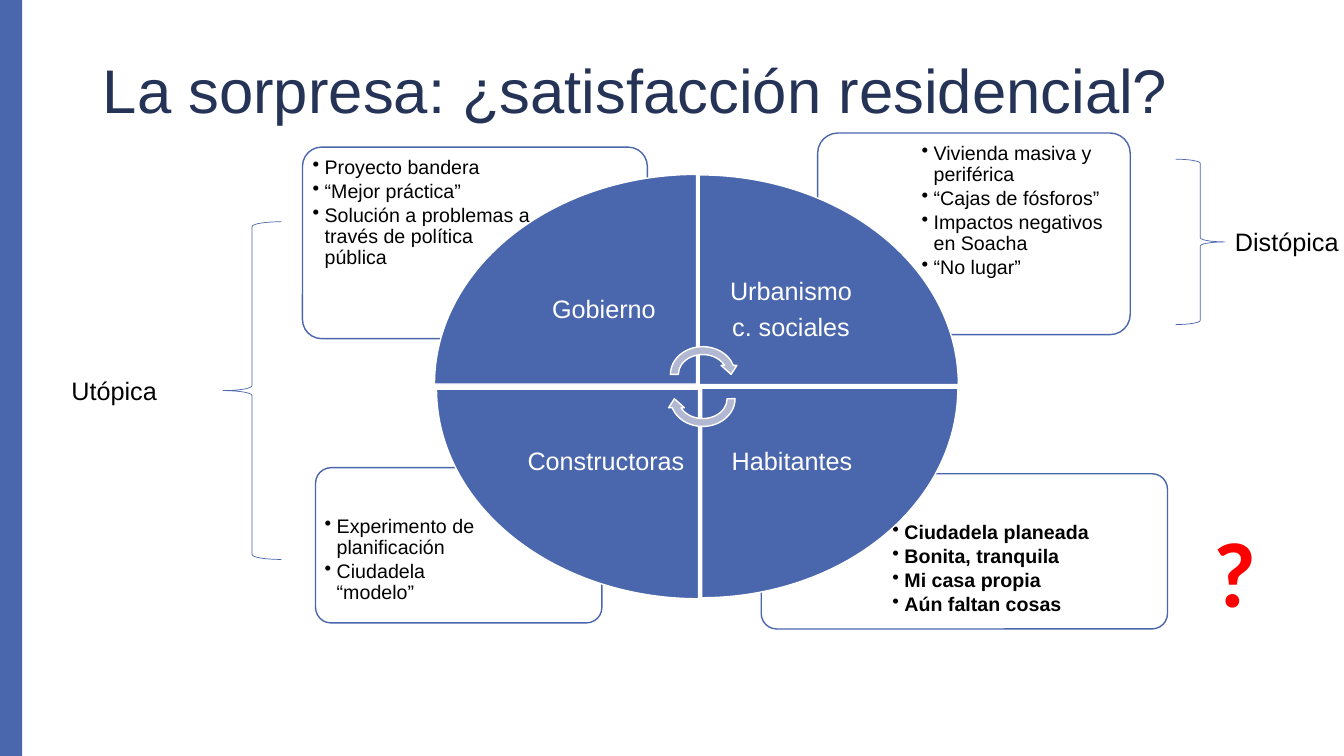
from lxml import etree
from pptx import Presentation, util as u
from pptx.dml.color import RGBColor
from pptx.enum import shapes, text
from pptx.oxml import ns

BLUE = RGBColor(0x4A, 0x66, 0xAC)
NAVY = RGBColor(0x25, 0x33, 0x56)
PALE = RGBColor(0xB2, 0xB8, 0xD2)
RED = RGBColor(0xFF, 0, 0)
WHITE = RGBColor(0xFF, 0xFF, 0xFF)
BLACK = RGBColor(0, 0, 0)
KIND = shapes.MSO_SHAPE
CELL = u.Inches(0.1)

presentation = Presentation()
presentation.slide_width = u.Inches(13.33)
presentation.slide_height = u.Inches(7.5)
slide = presentation.slides.add_slide(presentation.slide_layouts[5])


def add_figure(kind, cells, fill, line, weight=1, rotation=0):
    shape = slide.shapes.add_shape(kind, *[round(n * CELL) for n in cells])
    shape.shadow.inherit = False
    shape.rotation = rotation
    if fill is None:
        shape.fill.background()
    else:
        shape.fill.solid()
        shape.fill.fore_color.rgb = fill
    if line is None:
        shape.line.fill.background()
    else:
        shape.line.color.rgb = line
        shape.line.width = u.Pt(weight)
    return shape


def add_text(cells, lines, size, color, font="Arial", bold=False, inset=None, bullets=False):
    frame = slide.shapes.add_textbox(*[round(n * CELL) for n in cells]).text_frame
    frame.word_wrap = True
    if inset:
        frame.margin_left = frame.margin_right = u.Inches(inset)
        frame.margin_top = frame.margin_bottom = u.Inches(inset)
    frame.text = "\n".join(lines)
    for paragraph in frame.paragraphs:
        if bullets:
            paragraph.level = 1
            properties = paragraph._p.get_or_add_pPr()
            properties.set("marL", str(u.Inches(0.12)))
            properties.set("indent", str(-u.Inches(0.12)))
            etree.SubElement(properties, ns.qn("a:buChar")).set("char", "•")
            paragraph.line_spacing = 0.9
            paragraph.space_after = u.Pt(2.1)
        for run in paragraph.runs:
            run.font.name = font
            run.font.size = u.Pt(size)
            run.font.bold = bold
            run.font.color.rgb = color
    return frame


add_figure(KIND.RECTANGLE, (0, 0, 2.2, 75), BLUE, None)

title = slide.shapes.title
title.left, title.top, title.width, title.height = [round(n * CELL) for n in (9.2, 4, 115, 10.5)]
title.text_frame.text = "La sorpresa: ¿satisfacción residencial?"
title.text_frame.vertical_anchor = text.MSO_ANCHOR.MIDDLE
heading = title.text_frame.paragraphs[0]
heading.alignment = text.PP_ALIGN.LEFT
heading.line_spacing = 0.9
heading.runs[0].font.name = "Arial"
heading.runs[0].font.size = u.Pt(44)
heading.runs[0].font.color.rgb = NAVY

cards = [
    ((75.5, 47, 40.3, 15.4), (87.9, 51.2, 27.5, 10.9), True,
     ["Ciudadela planeada", "Bonita, tranquila", "Mi casa propia", "Aún faltan cosas"]),
    ((31.3, 46.4, 28.4, 15.4), (31.6, 50.6, 19.2, 10.9), False,
     ["Experimento de planificación", "Ciudadela “modelo”"]),
    ((81.1, 13.2, 31, 20), (90.8, 13.6, 20.8, 14.1), False,
     ["Vivienda masiva y periférica", "“Cajas de fósforos”",
      "Impactos negativos en Soacha", "“No lugar”"]),
    ((30, 14.6, 34.2, 19), (30.4, 15, 23.1, 13.4), False,
     ["Proyecto bandera", "“Mejor práctica”",
      "Solución a problemas a través de política pública"]),
]
for card_cells, text_cells, bold, lines in cards:
    card = add_figure(KIND.ROUNDED_RECTANGLE, card_cells, WHITE, BLUE)
    card.adjustments[0] = 0.1
    add_text(text_cells, lines, 14, BLACK, bold=bold, inset=0.06, bullets=True)

wedges = [
    ((43.1, 17.3, 26, 20.8), (50.7, 23.4, 18.4, 14.7), ["Gobierno"]),
    ((71.8, 14.9, 20.8, 25.7), (69.4, 23.4, 18.1, 14.7), ["Urbanismo", "c. sociales"]),
    ((69.6, 38.5, 25.4, 20.8), (69.6, 38.5, 17.9, 14.7), ["Habitantes"]),
    ((45.9, 36, 20.8, 26), (50.9, 38.5, 18.4, 14.7), ["Constructoras"]),
]
for turn, (wedge_cells, text_cells, lines) in enumerate(wedges):
    add_figure(KIND.PIE_WEDGE, wedge_cells, BLUE, WHITE, rotation=90 * turn)
    frame = add_text(text_cells, lines, 18, WHITE, inset=0.14)
    frame.vertical_anchor = text.MSO_ANCHOR.MIDDLE
    for paragraph in frame.paragraphs:
        paragraph.alignment = text.PP_ALIGN.CENTER
        paragraph.line_spacing = 0.9
        paragraph.space_after = u.Pt(6.3)

for top, rotation in ((34, 0), (36.4, 180)):
    add_figure(KIND.CIRCULAR_ARROW, (66.1, top, 7.2, 6.3), PALE, WHITE, rotation=rotation)

add_figure(KIND.LEFT_BRACE, (22.1, 22, 5.8, 33.5), None, BLUE, 0.5)
add_figure(KIND.RIGHT_BRACE, (116.6, 15.8, 4.9, 16.4), None, BLUE, 0.5)

labels = [
    ((6.1, 36.7, 20.7, 4), "Utópica", 18, BLACK, "Arial", False),
    ((121.5, 22, 13.9, 4), "Distópica", 18, BLACK, "Arial", False),
    ((119.4, 50.6, 10.4, 12.1), "?", 66, RED, "Calibri", True),
]
for cells, wording, size, color, font, bold in labels:
    frame = add_text(cells, [wording], size, color, font, bold)
    frame.auto_size = text.MSO_AUTO_SIZE.SHAPE_TO_FIT_TEXT

presentation.save("out.pptx")
